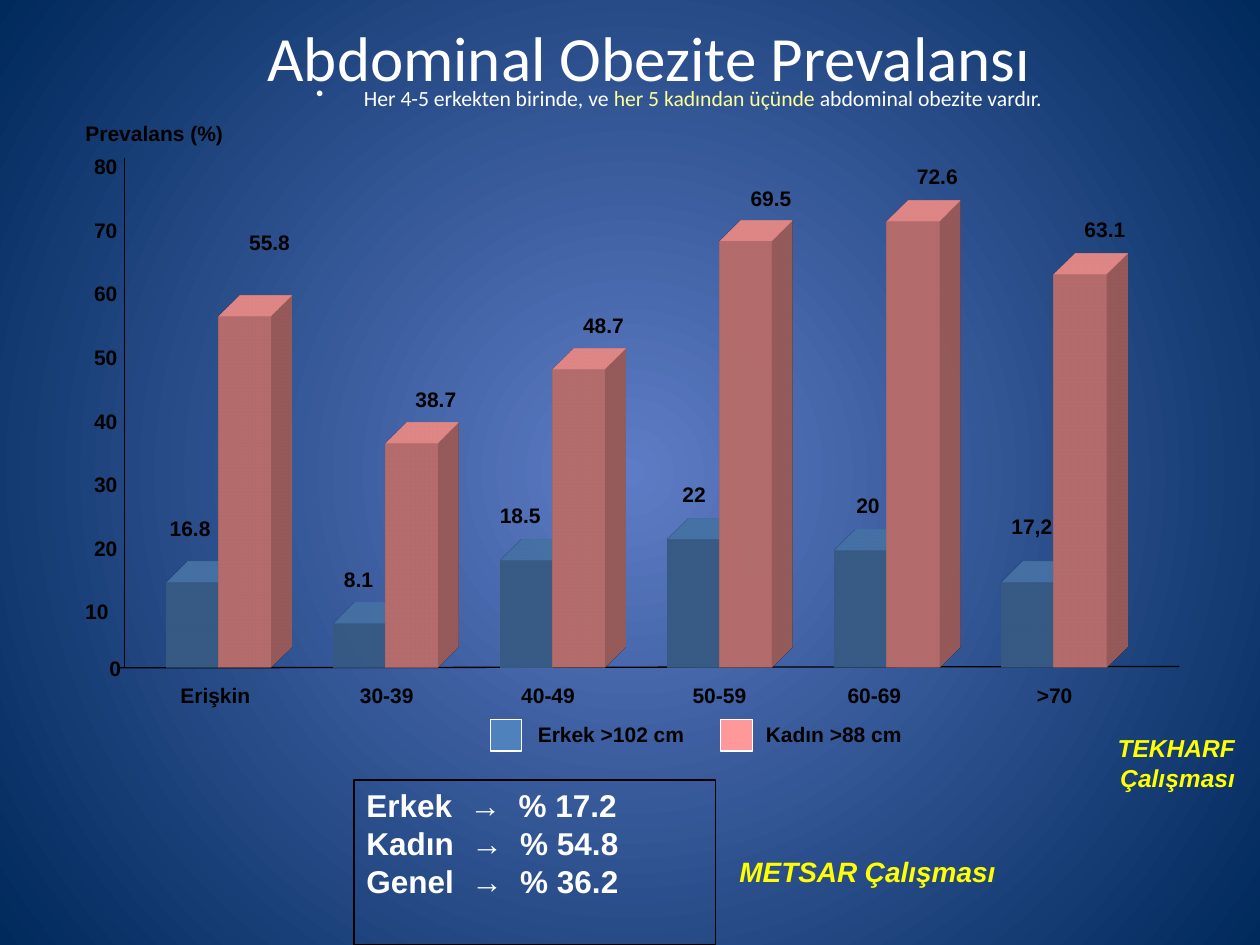
"""Build a slide on the prevalence of abdominal obesity by age and sex."""
from lxml.etree import SubElement
from pptx import Presentation
from pptx.dml.color import RGBColor
from pptx.enum.shapes import MSO_CONNECTOR, MSO_SHAPE
from pptx.enum.text import MSO_ANCHOR, PP_ALIGN
from pptx.oxml import parse_xml
from pptx.oxml.ns import nsdecls, qn
from pptx.util import Inches, Pt

COLORS = {
    "center": "5E7CC5", "edge": "00295C", "men": "4F81BD", "women": "FF9999",
    "dark": "000000", "light": "FFFFFF", "accent": "FFFF99", "source": "FFFF00",
}
BASE, FIRST_BAR, GROUP_STEP, BAR_WIDTH = 5.3, 1.32, 1.326, 0.415
GROUPS = [
    # category, centre, (men: label, label left, label top, height), (women: ...)
    ("Erişkin", 1.71, ("16.8", 1.11, 4.04, 0.68), ("55.8", 1.74, 1.77, 2.79)),
    ("30-39", 3.07, ("8.1", 2.4, 4.45, 0.35), ("38.7", 3.06, 3.02, 1.78)),
    ("40-49", 4.35, ("18.5", 3.73, 3.94, 0.85), ("48.7", 4.39, 2.43, 2.37)),
    ("50-59", 5.71, ("22", 5.04, 3.77, 1.02), ("69.5", 5.72, 1.42, 3.38)),
    ("60-69", 6.94, ("20", 6.42, 3.86, 0.93), ("72.6", 7.04, 1.25, 3.54)),
    (">70", 8.37, ("17,2", 7.79, 4.03, 0.68), ("63.1", 8.37, 1.67, 3.12)),
]
TICKS = [(80 - 10 * i, 1.03, 1.17 + 0.505 * i) for i in range(7)]
TICKS += [(10, 0.96, 4.7), (0, 1.06, 5.15)]


def rgb(name):
    """Return the named colour."""
    return RGBColor.from_string(COLORS[name])


class SlideBuilder:
    """Hold the style and the current slide."""

    def __init__(self, page):
        self.page = page

    def background(self):
        """Fill the page with a radial gradient."""
        fill = self.page.background.fill
        fill.gradient()
        for stop, name in zip(fill.gradient_stops, ("center", "edge")):
            stop.color.rgb = rgb(name)
        gradient = self.page.element.find(".//" + qn("a:gradFill"))
        gradient.replace(gradient.find(qn("a:lin")), parse_xml(
            f'<a:path {nsdecls("a")} path="circle">'
            '<a:fillToRect l="50000" t="50000" r="50000" b="50000"/></a:path>'))

    def style(self, frame, size, color, font="Arial", bold=True, italic=False,
              align=PP_ALIGN.LEFT):
        """Format every run of a text frame."""
        for para in frame.paragraphs:
            para.alignment = align
            for span in para.runs:
                span.font.size, span.font.name = Pt(size), font
                span.font.bold, span.font.italic = bold, italic
                span.font.color.rgb = rgb(color)

    def title(self, text):
        """Place and format the title placeholder."""
        box = self.page.shapes.title
        box.left, box.top, box.width, box.height = map(Inches, (0.64, 0.19, 9.02, 0.52))
        box.text_frame.text = text
        box.text_frame.vertical_anchor = MSO_ANCHOR.MIDDLE
        self.style(box.text_frame, 36, "light", "Calibri", False, align=PP_ALIGN.CENTER)

    def text(self, text, left, top, width, height=0.3, size=12, color="dark", **style):
        """Add a text box."""
        box = self.page.shapes.add_textbox(*map(Inches, (left, top, width, height)))
        box.text_frame.word_wrap = True
        box.text_frame.text = text
        self.style(box.text_frame, size, color, **style)
        return box

    def bullet(self, parts, left, top, width, height):
        """Add a bulleted line made of (text, colour) parts."""
        box = self.text("", left, top, width, height)
        para = box.text_frame.paragraphs[0]
        para.line_spacing, para.space_before = 0.6, Pt(2.5)
        for text, color in parts:
            span = para.add_run()
            span.text = text
            span.font.size, span.font.name = Pt(12.4), "Calibri"
            span.font.color.rgb = rgb(color)
        properties = para._p.get_or_add_pPr()
        properties.set("marL", str(Inches(0.38)))
        properties.set("indent", str(-Inches(0.38)))
        SubElement(properties, qn("a:buChar"), char="•")

    def rectangle(self, left, top, width, height, fill=None, line=None):
        """Add a flat rectangle."""
        box = self.page.shapes.add_shape(
            MSO_SHAPE.RECTANGLE, *map(Inches, (left, top, width, height)))
        box.shadow.inherit = False
        if fill:
            box.fill.solid()
            box.fill.fore_color.rgb = rgb(fill)
        else:
            box.fill.background()
        if line:
            box.line.color.rgb, box.line.width = rgb(line), Pt(0.75)
        else:
            box.line.fill.background()
        return box

    def bar(self, left, height, fill):
        """Add an extruded bar that stands on the base line."""
        box = self.rectangle(left, BASE - height, BAR_WIDTH, height, fill)
        properties = box._element.spPr
        properties.append(parse_xml(
            f'<a:scene3d {nsdecls("a")}><a:camera prst="legacyObliqueTopRight"/>'
            '<a:lightRig rig="legacyFlat3" dir="r"/></a:scene3d>'))
        properties.append(parse_xml(
            f'<a:sp3d {nsdecls("a")} extrusionH="430200" prstMaterial="legacyMatte">'
            f'<a:extrusionClr><a:srgbClr val="{COLORS[fill]}"/></a:extrusionClr></a:sp3d>'))

    def line(self, *ends):
        """Add a thin axis line."""
        connector = self.page.shapes.add_connector(
            MSO_CONNECTOR.STRAIGHT, *map(Inches, ends))
        connector.line.color.rgb, connector.line.width = rgb("dark"), Pt(0.75)
        SubElement(connector._element.spPr, qn("a:effectLst"))


def main():
    """Build and save the deck."""
    deck = Presentation()
    deck.slide_width, deck.slide_height = Inches(10), Inches(7.5)
    slide = SlideBuilder(deck.slides.add_slide(deck.slide_layouts[5]))
    slide.background()
    slide.title("Abdominal Obezite Prevalansı")
    slide.bullet([("Her 4-5 erkekten birinde, ve ", "light"),
                  ("her 5 kadından üçünde", "accent"),
                  (" abdominal obezite vardır.", "light")], 2.41, 0.7, 6.12, 0.37)

    slide.line(0.95, 5.3, 9.36, 5.29)
    slide.line(0.99, 5.29, 0.99, 1.25)
    slide.text("Prevalans (%)", 0.58, 0.91, 1.4)
    for value, right, top in TICKS:
        slide.text(str(value), right - 0.5, top, 0.5, align=PP_ALIGN.RIGHT)

    for index, (category, center, *bars) in enumerate(GROUPS):
        left = FIRST_BAR + index * GROUP_STEP
        for offset, fill, bar in zip((0, BAR_WIDTH), ("men", "women"), bars):
            label, label_left, label_top, height = bar
            slide.bar(left + offset, height, fill)
            slide.text(label, label_left, label_top, 0.66, align=PP_ALIGN.RIGHT)
        slide.text(category, center - 0.58, 5.37, 1.16, align=PP_ALIGN.CENTER)

    for label, fill, left, label_left in (("Erkek >102 cm", "men", 3.89, 4.17),
                                          ("Kadın >88 cm", "women", 5.72, 5.98)):
        slide.rectangle(left, 5.71, 0.25, 0.25, fill, "light")
        slide.text(label, label_left, 5.68, 1.5)

    slide.text("TEKHARF\vÇalışması", 7.81, 5.77, 2.09, 0.55, 14, "source",
               italic=True, align=PP_ALIGN.RIGHT)
    slide.text("METSAR Çalışması", 5.7, 6.73, 2.3, 0.37, 16, "source",
               italic=True, align=PP_ALIGN.RIGHT)
    summary = slide.rectangle(2.81, 6.19, 2.87, 1.31, line="dark").text_frame
    summary.text = "Erkek  →  % 17.2\nKadın  →  % 54.8\nGenel  →  % 36.2"
    summary.vertical_anchor = MSO_ANCHOR.TOP
    slide.style(summary, 18, "light")
    deck.save("out.pptx")


if __name__ == "__main__":
    main()
